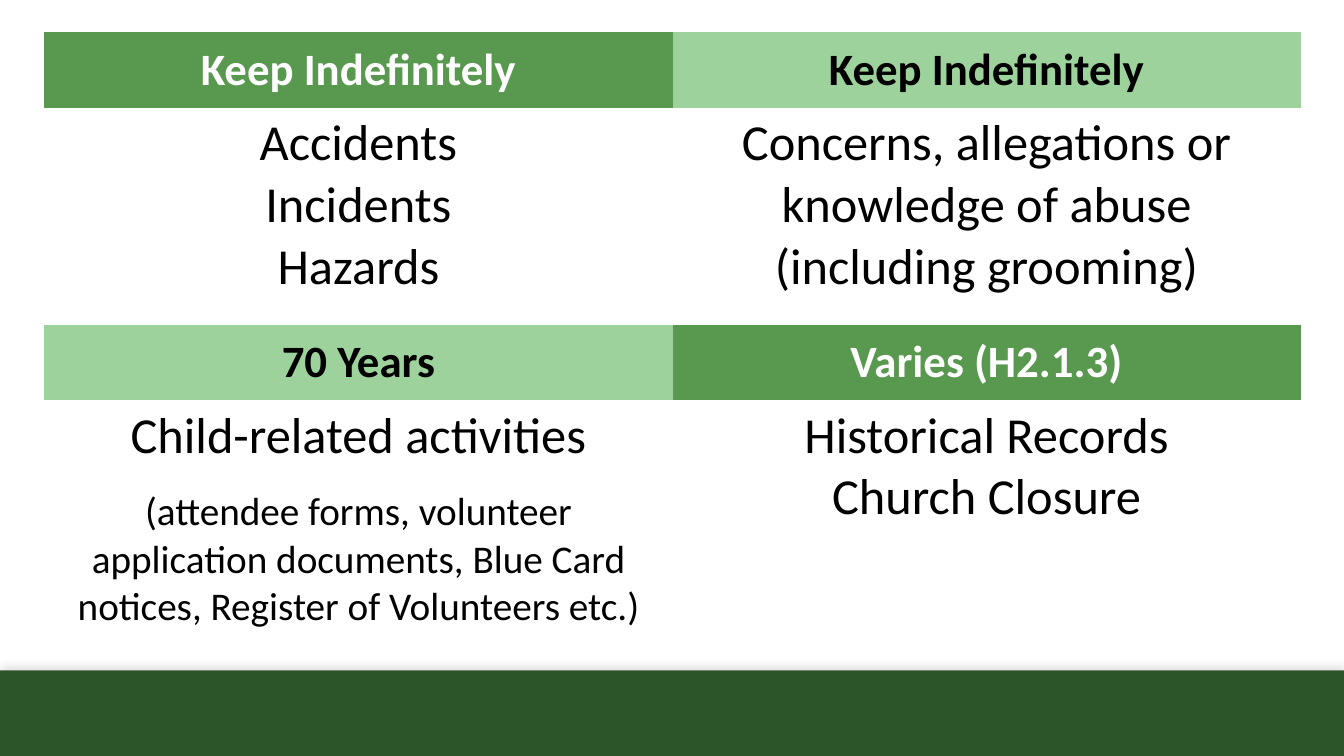
"""Build a slide that shows how long each kind of record is kept."""
from dataclasses import dataclass

from lxml import etree
from pptx import Presentation
from pptx.dml.color import RGBColor
from pptx.enum.shapes import MSO_SHAPE
from pptx.enum.text import MSO_ANCHOR, PP_ALIGN
from pptx.oxml import parse_xml
from pptx.oxml.ns import qn
from pptx.slide import Slide
from pptx.table import _Cell
from pptx.util import Inches, Pt

RECTANGLE = MSO_SHAPE.RECTANGLE
CENTER = PP_ALIGN.CENTER
TOP, MIDDLE = MSO_ANCHOR.TOP, MSO_ANCHOR.MIDDLE

SLIDE_WIDTH, SLIDE_HEIGHT = Inches(13.33), Inches(7.5)
BLANK_LAYOUT = 6
FOOTER_TOP = Inches(6.65)
TABLE_LEFT, TABLE_TOP = Inches(0.44), Inches(0.32)
COLUMN_WIDTH = Inches(6.23)
HEADING_HEIGHT = Inches(0.75)
BODY_HEIGHTS = (Inches(2.15), Inches(2.4))
COLUMNS = 2

FONT = "Calibri"
HEADING_SIZE, RECORD_SIZE, DETAIL_SIZE = 32, 36, 28
DETAIL_GAP = 15
WHITE, BLACK = "FFFFFF", "000000"
DARK_GREEN, MID_GREEN, PALE_GREEN = "2C5629", "59984F", "9DD29C"
PLAIN_TABLE_STYLE = "{2D5ABB26-0587-4C30-8999-92F81FD0307C}"
FOOTER_SHADOW = (
    '<a:outerShdw xmlns:a="http://schemas.openxmlformats.org/drawingml/2006/main"'
    ' blurRad="88900" dist="38100" dir="16200000" rotWithShape="0">'
    '<a:srgbClr val="000000"><a:alpha val="13000"/></a:srgbClr></a:outerShdw>'
)


@dataclass(frozen=True)
class Retention:
    """A retention period and the records it covers."""

    period: str
    records: tuple[str, ...]
    detail: str = ""


RETENTIONS = (
    Retention("Keep Indefinitely", ("Accidents", "Incidents", "Hazards")),
    Retention(
        "Keep Indefinitely",
        ("Concerns, allegations or knowledge of abuse (including grooming)",),
    ),
    Retention(
        "70 Years",
        ("Child-related activities",),
        "(attendee forms, volunteer application documents, "
        "Blue Card notices, Register of Volunteers etc.)",
    ),
    Retention("Varies (H2.1.3)", ("Historical Records", "Church Closure")),
)


def color(value: str) -> RGBColor:
    """Turn a hex string into a colour."""
    return RGBColor.from_string(value)


def write_line(cell: _Cell, text: str, size: int, ink: str = BLACK,
               bold: bool = False, gap: int = 0) -> None:
    """Add one centred paragraph to a cell, reusing its empty first one."""
    frame = cell.text_frame
    line = frame.add_paragraph() if frame.text else frame.paragraphs[0]
    line.text = text
    line.alignment = CENTER
    if gap:
        line.space_before = Pt(gap)
    line.font.name = FONT
    line.font.size = Pt(size)
    line.font.bold = bold
    line.font.color.rgb = color(ink)


def fill_heading(cell: _Cell, retention: Retention, dark: bool) -> None:
    """Write the period on its green band."""
    cell.fill.solid()
    cell.fill.fore_color.rgb = color(MID_GREEN if dark else PALE_GREEN)
    cell.vertical_anchor = MIDDLE
    write_line(cell, retention.period, HEADING_SIZE, WHITE if dark else BLACK, True)


def fill_body(cell: _Cell, retention: Retention) -> None:
    """List the records kept for the period."""
    cell.fill.background()
    cell.vertical_anchor = TOP
    for record in retention.records:
        write_line(cell, record, RECORD_SIZE)
    if retention.detail:
        write_line(cell, retention.detail, DETAIL_SIZE, gap=DETAIL_GAP)


def add_footer(slide: Slide) -> None:
    """Draw the dark band with its upward shadow."""
    footer = slide.shapes.add_shape(
        RECTANGLE, 0, FOOTER_TOP, SLIDE_WIDTH, SLIDE_HEIGHT - FOOTER_TOP)
    footer.fill.solid()
    footer.fill.fore_color.rgb = color(DARK_GREEN)
    footer.line.fill.background()
    footer.shadow.inherit = False
    effects = footer.element.spPr.find(qn("a:effectLst"))
    effects.append(parse_xml(FOOTER_SHADOW))


def add_retention_table(slide: Slide) -> None:
    """Lay out the retentions as headings above bodies, two per row."""
    heights = [height for body in BODY_HEIGHTS for height in (HEADING_HEIGHT, body)]
    frame = slide.shapes.add_table(
        len(heights), COLUMNS, TABLE_LEFT, TABLE_TOP,
        COLUMN_WIDTH * COLUMNS, sum(heights))
    table = frame.table
    table.first_row = table.horz_banding = False
    properties = frame.element.find(".//" + qn("a:tblPr"))
    style = properties.find(qn("a:tableStyleId"))
    if style is None:
        style = etree.SubElement(properties, qn("a:tableStyleId"))
    style.text = PLAIN_TABLE_STYLE
    for column in table.columns:
        column.width = COLUMN_WIDTH
    for row, height in zip(table.rows, heights):
        row.height = height
    for index, retention in enumerate(RETENTIONS):
        tier, column_index = divmod(index, COLUMNS)
        fill_heading(table.cell(2 * tier, column_index), retention,
                     dark=tier == column_index)
        fill_body(table.cell(2 * tier + 1, column_index), retention)


def main() -> None:
    """Build and save the slide."""
    presentation = Presentation()
    presentation.slide_width, presentation.slide_height = SLIDE_WIDTH, SLIDE_HEIGHT
    slide = presentation.slides.add_slide(presentation.slide_layouts[BLANK_LAYOUT])
    add_footer(slide)
    add_retention_table(slide)
    presentation.save("out.pptx")


if __name__ == "__main__":
    main()
